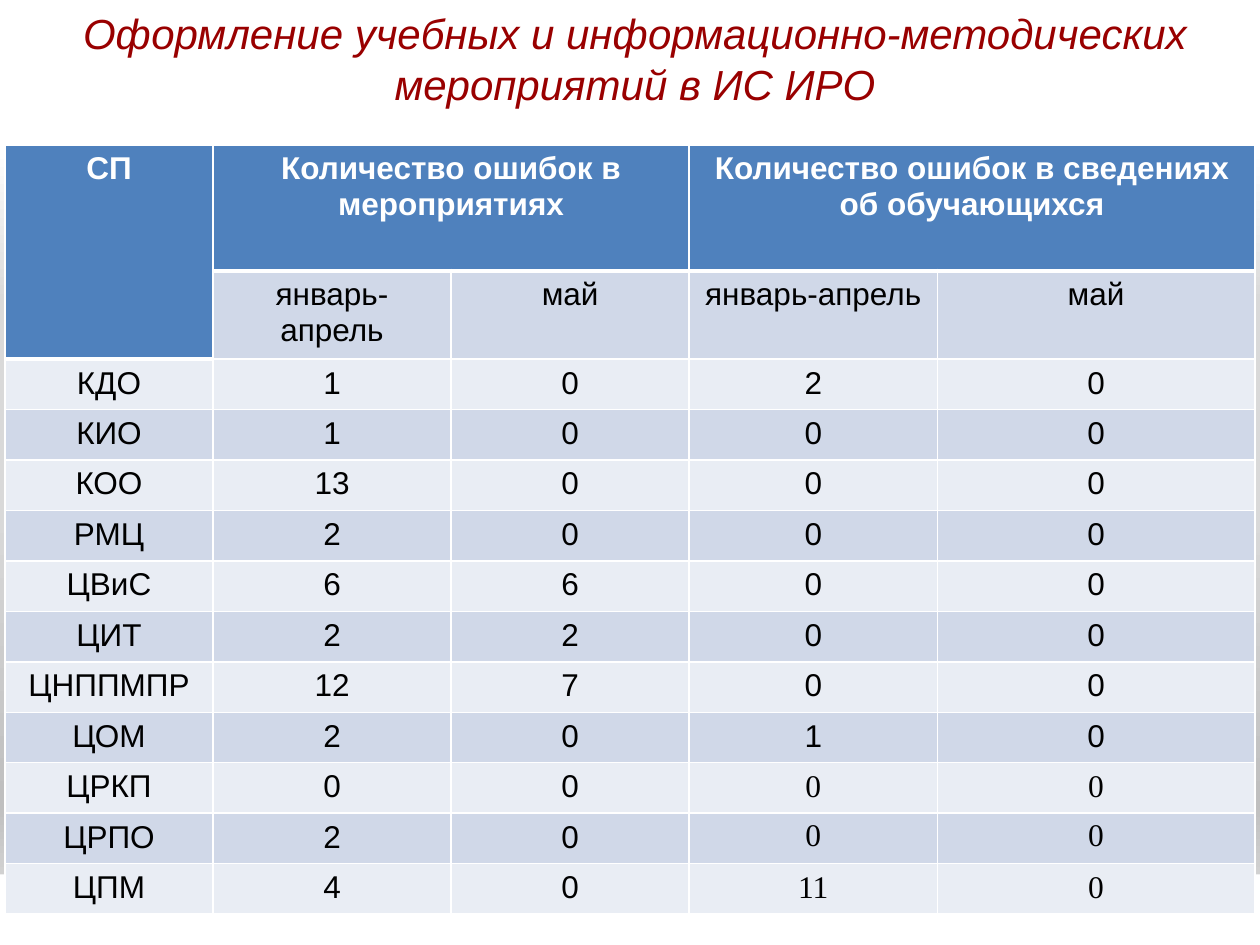
from lxml import etree
from pptx import Presentation
from pptx.dml.color import RGBColor
from pptx.enum.shapes import MSO_SHAPE
from pptx.enum.text import MSO_ANCHOR, PP_ALIGN
from pptx.oxml.ns import qn
from pptx.util import Inches, Pt

RECTANGLE = MSO_SHAPE.RECTANGLE
CENTER = PP_ALIGN.CENTER
MIDDLE = MSO_ANCHOR.MIDDLE

COLORS = {
    "white": "FFFFFF", "black": "000000", "title": "990000",
    "header": "4F81BD", "dark band": "D0D8E8", "light band": "E9EDF4",
}
BACKGROUND_STOPS = [(0, "FFFFFF"), (15, "FFFFFF"), (32, "D9D9D9"),
                    (54, "D9D9D9"), (85, "BFBFBF"), (100, "E6E6E6")]
SANS, SERIF = "Arial", "Times New Roman"

TITLE = "Оформление учебных и информационно-методических мероприятий в ИС ИРО"
ROWS = [
    ["СП", "Количество ошибок в мероприятиях", "",
     "Количество ошибок в сведениях об обучающихся", ""],
    ["", "январь-апрель", "май", "январь-апрель", "май"],
    ["КДО", 1, 0, 2, 0],
    ["КИО", 1, 0, 0, 0],
    ["КОО", 13, 0, 0, 0],
    ["РМЦ", 2, 0, 0, 0],
    ["ЦВиС", 6, 6, 0, 0],
    ["ЦИТ", 2, 2, 0, 0],
    ["ЦНППМПР", 12, 7, 0, 0],
    ["ЦОМ", 2, 0, 1, 0],
    ["ЦРКП", 0, 0, 0, 0],
    ["ЦРПО", 2, 0, 0, 0],
    ["ЦПМ", 4, 0, 11, 0],
]
COLUMN_WIDTHS = [1.65, 1.89, 1.89, 1.97, 2.52]
HEADER_HEIGHT, TABLE_HEIGHT = 1, 5.74
MERGES = [((0, 0), (1, 0)), ((0, 1), (0, 2)), ((0, 3), (0, 4))]
FIRST_SERIF_ROW, FIRST_SERIF_COLUMN = 10, 3
SPACED_ROW = 11


def color(name):
    return RGBColor.from_string(COLORS[name])


def add_solid_fill(parent, hex_color):
    fill = etree.SubElement(parent, qn("a:solidFill"))
    etree.SubElement(fill, qn("a:srgbClr"), val=hex_color)


class SlideBuilder:
    """Draws on one slide; places are shares of the slide's size."""

    def __init__(self, presentation):
        self.width = presentation.slide_width
        self.height = presentation.slide_height
        self.slide = presentation.slides.add_slide(presentation.slide_layouts[6])

    def place(self, left, top, width, height):
        return (round(left * self.width), round(top * self.height),
                round(width * self.width), round(height * self.height))

    def background(self, stops):
        fill = self.slide.background.fill
        fill.gradient()
        fill.gradient_angle = 270
        stop_list = self.slide.background._cSld.find(".//" + qn("a:gsLst"))
        stop_list.clear()
        for percent, hex_color in stops:
            stop = etree.SubElement(stop_list, qn("a:gs"), pos=str(percent * 1000))
            etree.SubElement(stop, qn("a:srgbClr"), val=hex_color)

    def band(self, *shares):
        shape = self.slide.shapes.add_shape(RECTANGLE, *self.place(*shares))
        shape.shadow.inherit = False
        shape.fill.solid()
        shape.fill.fore_color.rgb = color("white")
        shape.line.fill.background()

    def text(self, frame, words, size, color_name, font=SANS, bold=False, italic=False):
        paragraph = frame.paragraphs[0]
        paragraph.alignment = CENTER
        run = paragraph.add_run()
        run.text = words
        run.font.size = Pt(size)
        run.font.name = font
        run.font.bold = bold
        run.font.italic = italic
        run.font.color.rgb = color(color_name)
        return run

    def title(self, words, *shares):
        shape = self.slide.shapes.add_textbox(*self.place(*shares))
        shape.fill.solid()
        shape.fill.fore_color.rgb = color("white")
        frame = shape.text_frame
        frame.word_wrap = True
        frame.vertical_anchor = MIDDLE
        run = self.text(frame, words, 24, "title", italic=True)
        outline = etree.Element(qn("a:ln"), w=str(Pt(0.75)))
        add_solid_fill(outline, COLORS["title"])
        run.font._element.insert(0, outline)

    def borders(self, cell, top, bottom):
        properties = cell._tc.get_or_add_tcPr()
        for side, points in (("L", 1), ("R", 1), ("T", top), ("B", bottom)):
            line = etree.SubElement(properties, qn("a:ln" + side), w=str(Pt(points)))
            add_solid_fill(line, COLORS["white"])

    def cell(self, cell, row, column, value):
        is_header = row == 0 or (row == 1 and column == 0)
        header_end = 1 if column == 0 else 0
        self.borders(cell, 3 if row == header_end + 1 else 1,
                     3 if is_header else 1)
        band = "dark band" if row % 2 else "light band"
        cell.fill.solid()
        cell.fill.fore_color.rgb = color("header" if is_header else band)
        if value == "":
            return
        is_serif = row >= FIRST_SERIF_ROW and column >= FIRST_SERIF_COLUMN
        self.text(cell.text_frame, str(value), 18,
                  "white" if is_header else "black",
                  font=SERIF if is_serif else SANS, bold=is_header)
        if is_serif and row == SPACED_ROW:
            cell.margin_left = cell.margin_right = Inches(0.07)
            cell.margin_top = cell.margin_bottom = 0
            cell.text_frame.paragraphs[0].line_spacing = 1.15

    def table(self, rows, *shares):
        frame = self.slide.shapes.add_table(
            len(rows), len(COLUMN_WIDTHS), *self.place(*shares))
        table = frame.table
        table.first_row = table.horz_banding = False
        for column, width in zip(table.columns, COLUMN_WIDTHS):
            column.width = Inches(width)
        body_height = (TABLE_HEIGHT - HEADER_HEIGHT) / (len(rows) - 1)
        for index, row in enumerate(table.rows):
            row.height = Inches(body_height if index else HEADER_HEIGHT)
        for start, end in MERGES:
            table.cell(*start).merge(table.cell(*end))
        for row, values in enumerate(rows):
            for column, value in enumerate(values):
                self.cell(table.cell(row, column), row, column, value)


def main():
    presentation = Presentation()
    presentation.slide_width = Inches(10)
    presentation.slide_height = Inches(7.5)
    builder = SlideBuilder(presentation)

    # Background and white footer band
    builder.background(BACKGROUND_STOPS)
    builder.band(0, 6.94 / 7.5, 1, 0.56 / 7.5)

    # Title
    builder.title(TITLE, 0.004, 0, 1, 0.92 / 7.5)

    # Error counts by department
    builder.table(ROWS, 0.004, 1.15 / 7.5, 0.992, TABLE_HEIGHT / 7.5)

    presentation.save("out.pptx")


if __name__ == "__main__":
    main()
